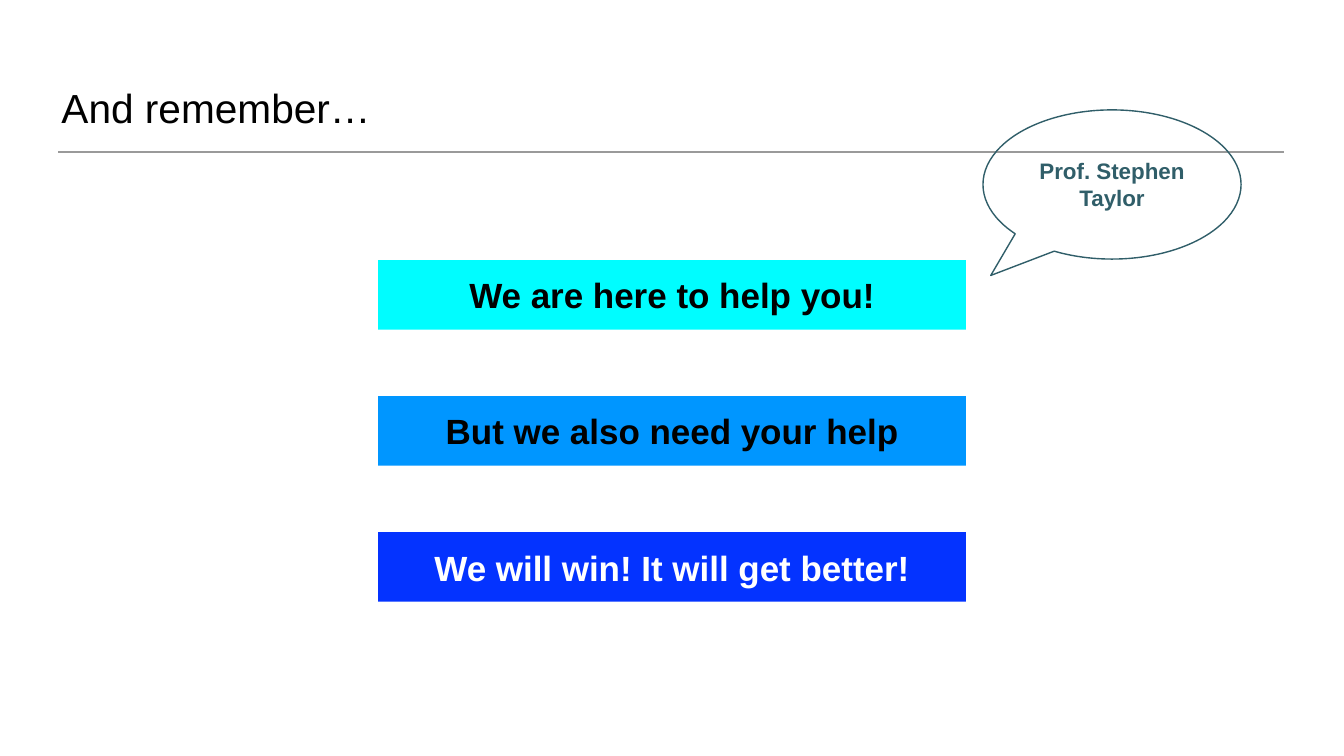
from dataclasses import dataclass

from lxml import etree
from pptx import Presentation
from pptx.dml.color import RGBColor
from pptx.enum.shapes import MSO_CONNECTOR, MSO_SHAPE
from pptx.enum.text import MSO_ANCHOR, PP_ALIGN
from pptx.oxml.ns import qn
from pptx.shapes.autoshape import Shape
from pptx.slide import Slide
from pptx.util import Emu, Pt

RECTANGLE = MSO_SHAPE.RECTANGLE
CALLOUT = MSO_SHAPE.OVAL_CALLOUT
STRAIGHT = MSO_CONNECTOR.STRAIGHT
MIDDLE, BOTTOM = MSO_ANCHOR.MIDDLE, MSO_ANCHOR.BOTTOM
LEFT, CENTER = PP_ALIGN.LEFT, PP_ALIGN.CENTER

EMU_PER_PX = 9144


@dataclass(frozen=True)
class Theme:
    font: str = "Arial"
    black: str = "000000"
    white: str = "FFFFFF"
    rule: str = "9A9A9A"
    teal: str = "305E69"
    cyan: str = "00FDFF"
    azure: str = "0096FF"
    blue: str = "0433FF"
    title_size: int = 29
    banner_size: int = 25
    callout_size: int = 16
    line_width: int = 1


@dataclass(frozen=True)
class Box:
    left: int
    top: int
    width: int
    height: int

    def emu(self) -> tuple[Emu, Emu, Emu, Emu]:
        """Return the position and size in EMU."""
        return px(self.left), px(self.top), px(self.width), px(self.height)


@dataclass(frozen=True)
class Banner:
    text: str
    fill: str
    color: str


THEME = Theme()
TITLE_BOX = Box(58, 26, 1216, 108)
RULE_TOP = 151
CALLOUT_BOX = Box(975, 109, 256, 148)
CALLOUT_TIP = (-0.47, 0.61)
FIRST_BANNER = Box(375, 258, 583, 69)
BANNER_PITCH = 135
BANNERS = (
    Banner("We are here to help you!", THEME.cyan, THEME.black),
    Banner("But we also need your help", THEME.azure, THEME.black),
    Banner("We will win! It will get better!", THEME.blue, THEME.white),
)


def px(value: int) -> Emu:
    """Convert whole pixels to EMU."""
    return Emu(value * EMU_PER_PX)


def rgb(value: str) -> RGBColor:
    """Convert a hex string to a colour."""
    return RGBColor.from_string(value)


def write_text(sp: Shape, text: str, size: int, color: str, bold: bool = True,
               align: PP_ALIGN = CENTER, anchor: MSO_ANCHOR = MIDDLE,
               inset: int = 3) -> None:
    """Write and format one paragraph in a shape."""
    tf = sp.text_frame
    tf.text = text
    tf.word_wrap = True
    tf.vertical_anchor = anchor
    tf.margin_left = tf.margin_right = px(inset)
    tf.margin_top = tf.margin_bottom = px(inset)
    p = tf.paragraphs[0]
    p.alignment = align
    font = p.runs[0].font
    font.name = THEME.font
    font.size = Pt(size)
    font.bold = bold
    font.color.rgb = rgb(color)


def add_title(s: Slide, text: str) -> None:
    """Add the slide title and the rule below it."""
    start, end = TITLE_BOX.left, TITLE_BOX.left + TITLE_BOX.width
    rule = s.shapes.add_connector(
        STRAIGHT, px(start), px(RULE_TOP), px(end), px(RULE_TOP))
    rule.line.color.rgb = rgb(THEME.rule)
    rule.line.width = Pt(THEME.line_width)
    etree.SubElement(rule._element.spPr, qn("a:effectLst"))
    sp = s.shapes.add_textbox(*TITLE_BOX.emu())
    write_text(sp, text, THEME.title_size, THEME.black, bold=False,
               align=LEFT, anchor=BOTTOM)


def add_banner(s: Slide, banner: Banner, index: int) -> None:
    """Add one coloured banner at its place in the column."""
    first = FIRST_BANNER
    box = Box(first.left, first.top + index * BANNER_PITCH,
              first.width, first.height)
    sp = s.shapes.add_shape(RECTANGLE, *box.emu())
    sp.shadow.inherit = False
    sp.fill.solid()
    sp.fill.fore_color.rgb = rgb(banner.fill)
    sp.line.fill.background()
    write_text(sp, banner.text, THEME.banner_size, banner.color)


def add_callout(s: Slide, text: str) -> None:
    """Add the outlined speech bubble."""
    sp = s.shapes.add_shape(CALLOUT, *CALLOUT_BOX.emu())
    sp.adjustments[0], sp.adjustments[1] = CALLOUT_TIP
    sp.shadow.inherit = False
    sp.fill.background()
    sp.line.color.rgb = rgb(THEME.teal)
    sp.line.width = Pt(THEME.line_width)
    write_text(sp, text, THEME.callout_size, THEME.teal, inset=6)


def main() -> None:
    """Build and save the slide."""
    prs = Presentation()
    prs.slide_width, prs.slide_height = px(1333), px(750)
    s = prs.slides.add_slide(prs.slide_layouts[6])
    add_title(s, "And remember…")
    for index, banner in enumerate(BANNERS):
        add_banner(s, banner, index)
    add_callout(s, "Prof. Stephen Taylor")
    prs.save("out.pptx")


if __name__ == "__main__":
    main()
